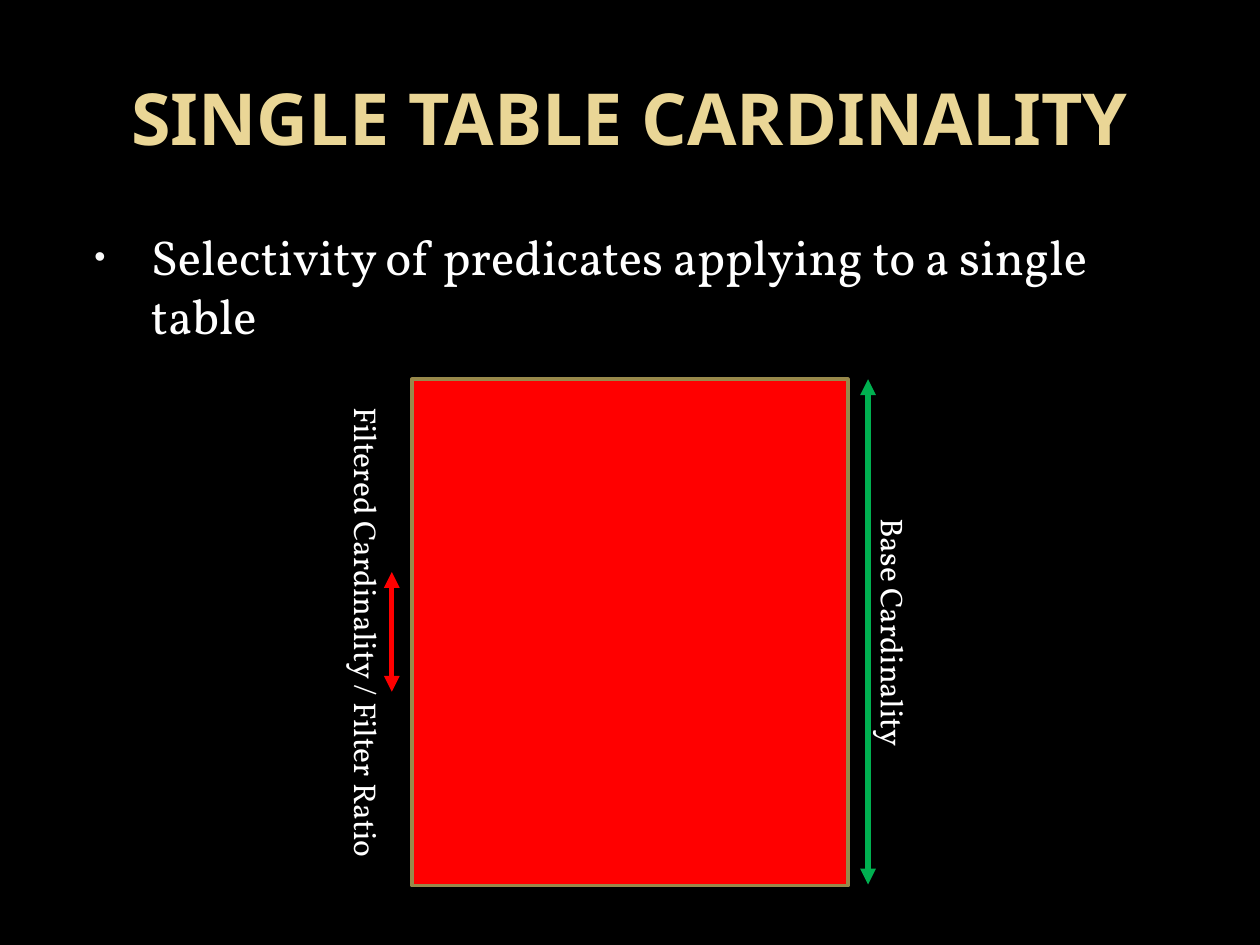
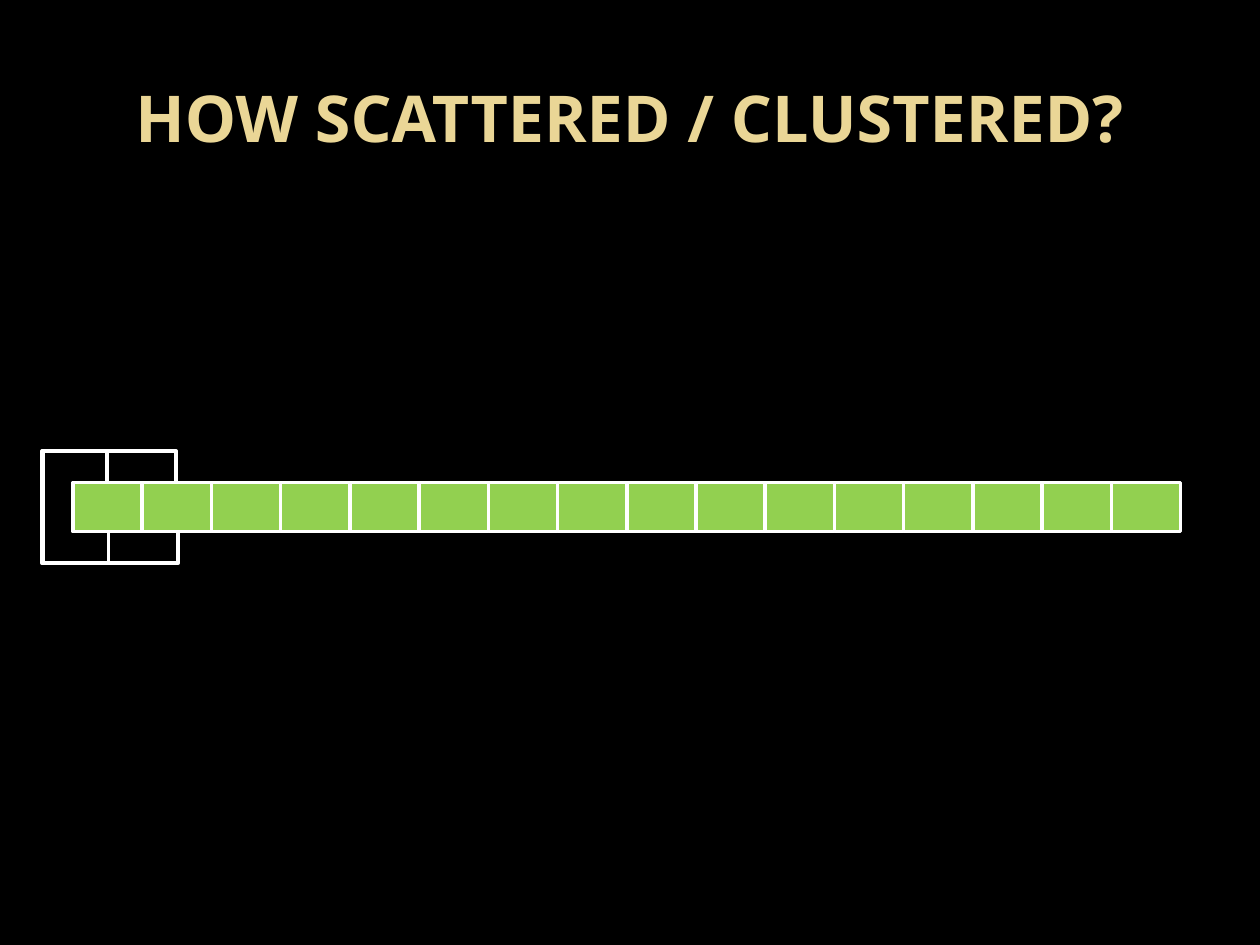
from lxml import etree
from pptx import Presentation
from pptx import util as u
from pptx.dml.color import RGBColor
from pptx.enum import shapes, text
from pptx.oxml.ns import qn

BLACK, WHITE, GOLD, OLIVE = "000000", "FFFFFF", "EAD696", "98894B"
RED, GREEN, LIME = "FF0000", "00B050", "92D050"
HEADING_FONT, BODY_FONT = "Noto Sans", "Vollkorn"

CARDINALITY = {
    "title": ("SINGLE TABLE CARDINALITY", 41),
    "bullet": "Selectivity of predicates applying to a single table",
    "table": (3.27, 3.01, 3.46, 4.02),
    "labels": [("Base Cardinality", 7.09),
               ("Filtered Cardinality / Filter Ratio", 2.91)],
    "spans": [(6.89, 3.01, 7.02, GREEN), (3.11, 4.54, 5.49, RED)],
}
CLUSTERING = {
    "title": ("HOW SCATTERED / CLUSTERED?", 36.9),
    "blocks": 16,
    "row": (0.58, 3.83, 8.79, 0.39),
    "loops": [(0, 0.53), (1, 1.08)],
    "loop_rise": 0.25,
}


def color(hex_code):
    return RGBColor.from_string(hex_code)


def add_sub(parent, tag, **attributes):
    return etree.SubElement(parent, qn(tag), attributes)


def add_text(slide, words, box, size, font=BODY_FONT, ink=WHITE, bold=False,
             align=text.PP_ALIGN.CENTER, anchor=text.MSO_ANCHOR.TOP,
             rotation=0, bullet=None):
    holder = slide.shapes.add_textbox(*map(u.Inches, box))
    holder.rotation = rotation
    frame = holder.text_frame
    frame.word_wrap = True
    frame.vertical_anchor = anchor
    paragraph = frame.paragraphs[0]
    paragraph.alignment = align
    run = paragraph.add_run()
    run.text = words
    run.font.name, run.font.size, run.font.bold = font, u.Pt(size), bold
    run.font.color.rgb = color(ink)
    if bullet:
        paragraph.space_before = u.Pt(size * 0.2)
        props = paragraph._p.get_or_add_pPr()
        props.set("marL", str(u.Inches(0.6)))
        props.set("indent", str(u.Inches(-0.45)))
        add_sub(add_sub(props, "a:buClr"), "a:srgbClr", val="F9F9F9")
        add_sub(props, "a:buSzPct", val="65000")
        add_sub(props, "a:buFont", typeface="Arial")
        add_sub(props, "a:buChar", char=bullet)


def add_block(slide, box, fill, outline):
    block = slide.shapes.add_shape(shapes.MSO_SHAPE.RECTANGLE, *map(u.Inches, box))
    block.shadow.inherit = False
    block.fill.solid()
    block.fill.fore_color.rgb = color(fill)
    block.line.color.rgb = color(outline)
    block.line.width = u.Pt(2)
    return block


def style_line(connector, ink, width):
    connector.line.color.rgb = color(ink)
    connector.line.width = u.Pt(width)
    add_sub(connector._element.spPr, "a:effectLst")


def add_span(slide, x, top, bottom, ink):
    span = slide.shapes.add_connector(
        shapes.MSO_CONNECTOR.STRAIGHT, *map(u.Inches, (x, top, x, bottom)))
    style_line(span, ink, 3)
    for end in ("a:headEnd", "a:tailEnd"):
        add_sub(span.line._get_or_add_ln(), end, type="triangle")


def add_loop(slide, block, reach, rise):
    loop = slide.shapes.add_connector(shapes.MSO_CONNECTOR.ELBOW, 0, 0, 0, 0)
    loop.begin_connect(block, 2)
    loop.end_connect(block, 0)
    length, offset = block.height, u.Pt(1)
    props = loop._element.spPr
    frame = props.find(qn("a:xfrm"))
    frame.attrib.clear()
    frame.set("rot", "5400000")
    frame.set("flipH", "1")
    loop.left = block.left + (block.width - length) // 2
    loop.top = block.top + (length - offset) // 2
    loop.width, loop.height = length, offset
    geometry = props.find(qn("a:prstGeom"))
    geometry.set("prst", "bentConnector5")
    guides = geometry.find(qn("a:avLst"))
    if guides is None:
        guides = add_sub(geometry, "a:avLst")
    overshoot = u.Inches(rise) / length
    ratios = (-overshoot, u.Inches(reach) / offset, 1 + overshoot)
    for number, ratio in enumerate(ratios, 1):
        add_sub(guides, "a:gd", name=f"adj{number}", fmla=f"val {round(ratio * 100000)}")
    style_line(loop, WHITE, 2.25)


def add_slide(deck, title):
    slide = deck.slides.add_slide(deck.slide_layouts[6])
    slide.background.fill.solid()
    slide.background.fill.fore_color.rgb = color(BLACK)
    words, size = title
    add_text(slide, words, (0.5, 0.3, 9, 1.25), size, font=HEADING_FONT,
             ink=GOLD, bold=True, anchor=text.MSO_ANCHOR.MIDDLE)
    return slide


def build_cardinality(deck):
    slide = add_slide(deck, CARDINALITY["title"])
    add_text(slide, CARDINALITY["bullet"], (0.5, 1.75, 9, 5.15), 28,
             align=text.PP_ALIGN.LEFT, bullet="•")
    add_block(slide, CARDINALITY["table"], RED, OLIVE)
    _, top, _, height = CARDINALITY["table"]
    for span in CARDINALITY["spans"]:
        add_span(slide, *span)
    for words, center in CARDINALITY["labels"]:
        box = (center - height / 2, top + height / 2 - 0.2, height, 0.4)
        add_text(slide, words, box, 18, rotation=90)


def build_clustering(deck):
    slide = add_slide(deck, CLUSTERING["title"])
    left, top, width, height = CLUSTERING["row"]
    pitch = width / CLUSTERING["blocks"]
    blocks = [add_block(slide, (left + i * pitch, top, pitch, height), LIME, WHITE)
              for i in range(CLUSTERING["blocks"])]
    for index, reach in CLUSTERING["loops"]:
        add_loop(slide, blocks[index], reach, CLUSTERING["loop_rise"])


def main():
    deck = Presentation()
    deck.slide_width, deck.slide_height = u.Inches(10), u.Inches(7.5)
    build_cardinality(deck)
    build_clustering(deck)
    deck.save("out.pptx")


if __name__ == "__main__":
    main()
